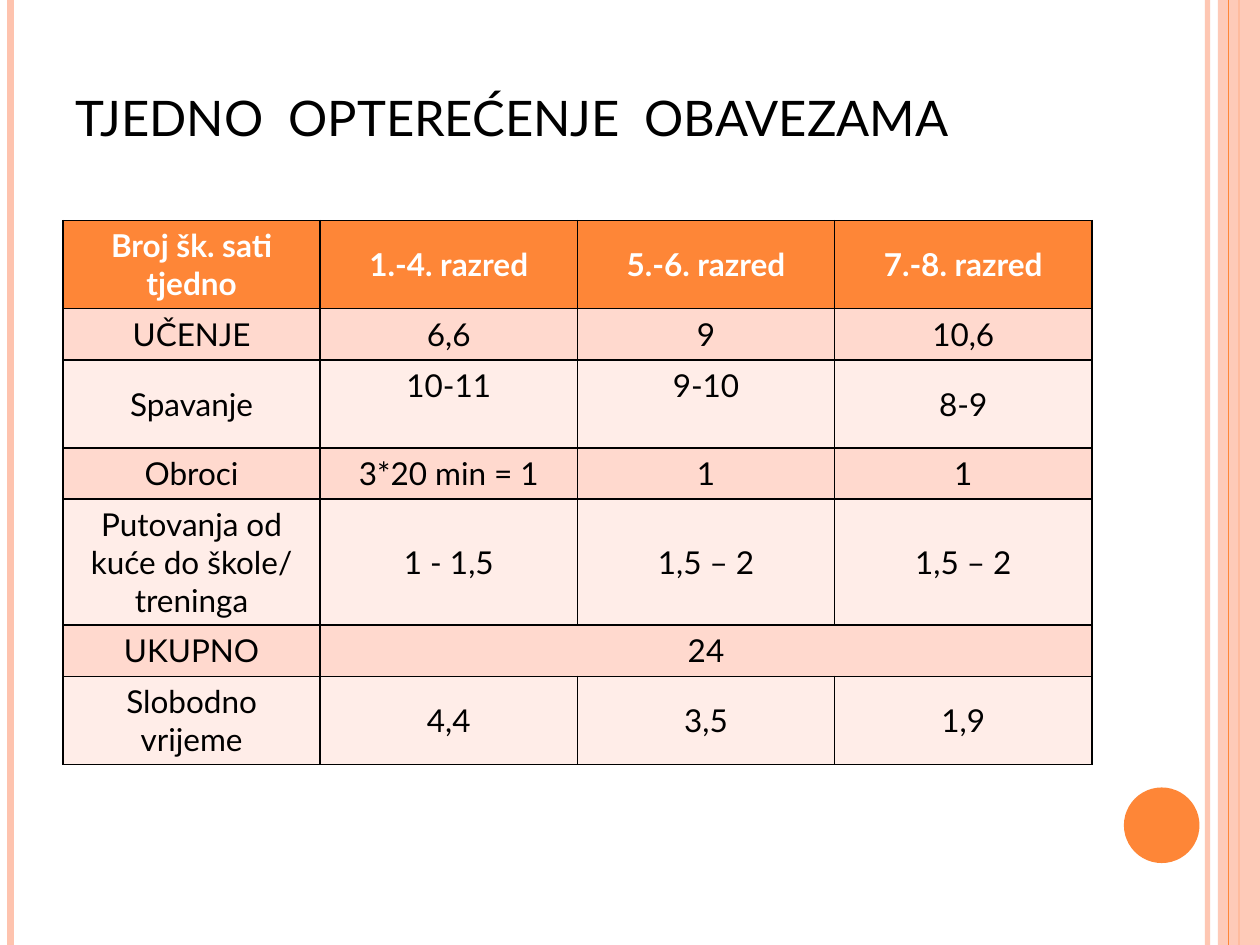
from lxml import etree
from pptx import Presentation
from pptx.dml.color import RGBColor
from pptx.enum.shapes import MSO_CONNECTOR, MSO_SHAPE
from pptx.enum.text import MSO_ANCHOR, PP_ALIGN
from pptx.oxml.ns import qn
from pptx.util import Pt

STRAIGHT = MSO_CONNECTOR.STRAIGHT
RECTANGLE, OVAL = MSO_SHAPE.RECTANGLE, MSO_SHAPE.OVAL
TOP, MIDDLE, BOTTOM = MSO_ANCHOR.TOP, MSO_ANCHOR.MIDDLE, MSO_ANCHOR.BOTTOM
CENTER = PP_ALIGN.CENTER

WIDTH, HEIGHT = 720, 540
FONT = "Lato"
COLORS = {
    "orange": "FE8637", "peach": "FEC3AE", "band_dark": "FFD9CE",
    "band_light": "FFEDE8", "black": "000000", "white": "FFFFFF",
}

ROWS = [
    ["Broj šk. sati tjedno", "1.-4. razred", "5.-6. razred", "7.-8. razred"],
    ["UČENJE", "6,6", "9", "10,6"],
    ["Spavanje", "10-11", "9-10", "8-9"],
    ["Obroci", "3*20 min = 1", "1", "1"],
    ["Putovanja od kuće do škole/ treninga", "1 - 1,5", "1,5 – 2", "1,5 – 2"],
    ["UKUPNO", "24"],
    ["Slobodno vrijeme", "4,4", "3,5", "1,9"],
]
LINES_PER_ROW = [2, 1, 2, 1, 3, 1, 2]
ROW_HEIGHTS = {1: 29.2, 2: 50.4, 3: 72}
TOP_CELLS = {(2, 1), (2, 2)}
TOTAL_ROW = 5


def rgb(name):
    return RGBColor.from_string(COLORS[name])


def set_alpha(fill_parent, percent):
    color = fill_parent.find(f"{qn('a:solidFill')}/{qn('a:srgbClr')}")
    etree.SubElement(color, qn("a:alpha"), val=str(percent * 1000))


def style_text(paragraph, text, size, color, bold=False):
    run = paragraph.add_run()
    run.text = text
    for key, value in {"name": FONT, "size": Pt(size), "bold": bold}.items():
        setattr(run.font, key, value)
    run.font.color.rgb = rgb(color)


def add_stripe(slide, x, color, width, alpha=100):
    """Add a vertical line over the full slide height."""
    stripe = slide.shapes.add_connector(STRAIGHT, Pt(x), 0, Pt(x), Pt(HEIGHT))
    stripe.line.color.rgb = rgb(color)
    stripe.line.width = Pt(width)
    properties = stripe._element.spPr
    etree.SubElement(properties, qn("a:effectLst"))
    if alpha < 100:
        set_alpha(properties.find(qn("a:ln")), alpha)


def add_plain_shape(slide, kind, box, color):
    shape = slide.shapes.add_shape(kind, *map(Pt, box))
    shape.shadow.inherit = False
    shape.fill.solid()
    shape.fill.fore_color.rgb = rgb(color)
    shape.line.fill.background()
    return shape


def add_decoration(slide):
    add_stripe(slide, 690, "peach", 3, 93)
    add_stripe(slide, 6, "peach", 4.5)
    add_stripe(slide, 708, "orange", 1.5)
    band = add_plain_shape(slide, RECTANGLE, (696, 0, WIDTH - 696, HEIGHT), "peach")
    set_alpha(band._element.spPr, 87)
    add_stripe(slide, 702, "orange", 0.75)
    add_plain_shape(slide, OVAL, (642.24, 450, 43.2, 43.2), "orange")


def add_title(slide, box):
    frame = slide.shapes.add_textbox(*map(Pt, box)).text_frame
    frame.word_wrap = True
    frame.vertical_anchor = BOTTOM
    style_text(frame.paragraphs[0], "TJEDNO  OPTEREĆENJE  OBAVEZAMA", 28, "black")


def add_borders(cell):
    properties = cell._tc.get_or_add_tcPr()
    for index, side in enumerate("LRTB"):
        border = etree.Element(qn(f"a:ln{side}"), w=str(Pt(1)))
        fill = etree.SubElement(border, qn("a:solidFill"))
        etree.SubElement(fill, qn("a:srgbClr"), val=COLORS["black"])
        properties.insert(index, border)


def row_fill(row):
    if row == 0:
        return "orange"
    return "band_dark" if row % 2 else "band_light"


def add_hours_table(slide, left, top, width):
    heights = [ROW_HEIGHTS[lines] for lines in LINES_PER_ROW]
    columns = len(ROWS[0])
    table = slide.shapes.add_table(
        len(ROWS), columns, Pt(left), Pt(top), Pt(width), Pt(sum(heights))).table
    table.horz_banding = table.first_row = False
    for column in table.columns:
        column.width = Pt(width / columns)
    for r, height in enumerate(heights):
        table.rows[r].height = Pt(height)
        for c in range(columns):
            cell = table.cell(r, c)
            cell.fill.solid()
            cell.fill.fore_color.rgb = rgb(row_fill(r))
            cell.vertical_anchor = TOP if (r, c) in TOP_CELLS else MIDDLE
            add_borders(cell)
        for c, text in enumerate(ROWS[r]):
            paragraph = table.cell(r, c).text_frame.paragraphs[0]
            paragraph.alignment = CENTER
            style_text(paragraph, text, 18, "black" if r else "white", r == 0)
    table.cell(TOTAL_ROW, 1).merge(table.cell(TOTAL_ROW, columns - 1))


def main():
    presentation = Presentation()
    presentation.slide_width, presentation.slide_height = Pt(WIDTH), Pt(HEIGHT)
    slide = presentation.slides.add_slide(presentation.slide_layouts[6])
    add_decoration(slide)
    add_title(slide, (36, 43.2, 588, 44))
    add_hours_table(slide, 36, 126, 588)
    presentation.save("out.pptx")


if __name__ == "__main__":
    main()
